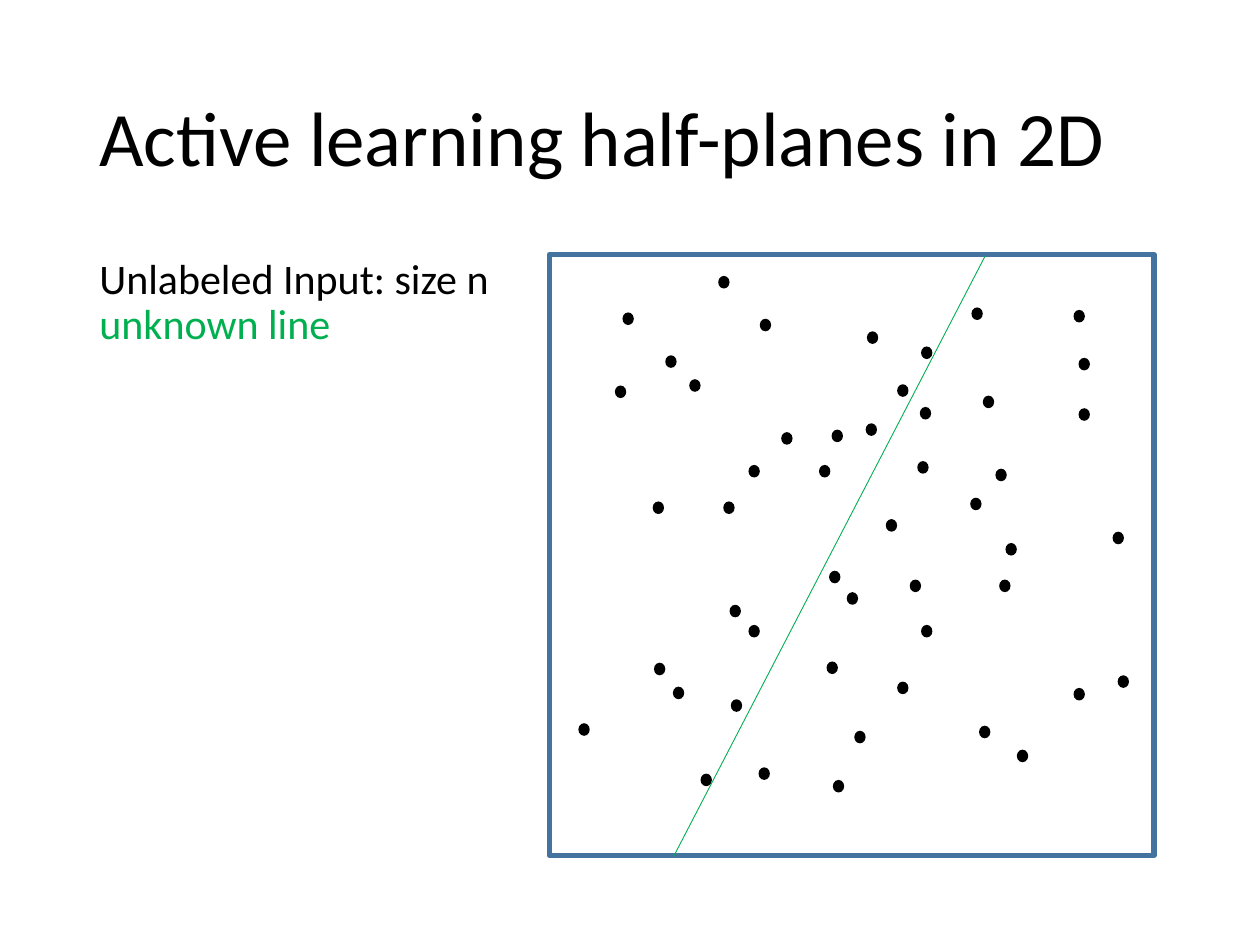
"""Build a slide on active learning of half-planes in 2D."""
from lxml import etree
from pptx import Presentation
from pptx.dml.color import RGBColor
from pptx.enum.shapes import MSO_CONNECTOR, MSO_SHAPE
from pptx.enum.text import MSO_ANCHOR
from pptx.oxml.ns import qn
from pptx.util import Inches, Pt

RECT, OVAL = MSO_SHAPE.RECTANGLE, MSO_SHAPE.OVAL
LINE = MSO_CONNECTOR.STRAIGHT
TOP, MIDDLE = MSO_ANCHOR.TOP, MSO_ANCHOR.MIDDLE
FONT = "Calibri"
COLORS = {"ink": "000000", "green": "00B050", "frame": "43739E"}
DOT_W, DOT_H = 0.09, 0.1
DOTS = [
    (4.94, 2.48), (4.88, 3.06), (5.28, 2.82), (6.88, 2.63), (7.31, 2.75),
    (5.18, 3.98), (5.74, 3.98), (6.2, 3.43), (5.19, 5.26), (4.59, 5.74),
    (5.8, 5.55), (5.79, 4.8), (5.56, 6.14), (6.02, 6.09), (7.22, 4.6),
    (7.12, 5.41), (7.93, 4.6), (7.77, 5.76), (6.72, 4.7), (8.07, 5.95),
    (5.7, 2.19), (5.47, 3.01), (6.03, 2.53), (7.71, 2.44), (8.52, 2.46),
    (5.94, 3.69), (6.5, 3.69), (6.87, 3.36), (5.94, 4.96), (5.34, 5.45),
    (6.56, 5.25), (6.58, 4.53), (6.61, 6.19), (6.78, 5.8), (7.98, 4.31),
    (7.31, 4.96), (8.83, 4.22), (8.52, 5.46), (7.28, 3.66), (8.87, 5.36),
    (7.8, 3.14), (7.7, 3.95), (8.56, 3.24), (7.3, 3.23), (7.03, 4.12),
    (7.12, 3.05), (8.56, 2.84), (7.9, 3.72), (6.6, 3.41),
]

prs = Presentation()
prs.slide_width, prs.slide_height = Inches(10), Inches(7.5)
slide = prs.slides.add_slide(prs.slide_layouts[6])
shapes = slide.shapes


def color(name):
    return RGBColor.from_string(COLORS[name])


def add_text(lines, box, size, anchor=TOP, before=0):
    frame = shapes.add_textbox(*map(Inches, box)).text_frame
    frame.word_wrap = True
    frame.vertical_anchor = anchor
    para = frame.paragraphs[0]
    para.line_spacing = 0.9
    para.space_before = Pt(before)
    for i, (text, tint) in enumerate(lines):
        if i:
            para.add_line_break()
        run = para.add_run()
        run.text = text
        run.font.name = FONT
        run.font.size = Pt(size)
        run.font.color.rgb = color(tint)


add_text([("Active learning half-planes in 2D", "ink")],
         (0.69, 0.4, 8.62, 1.45), size=44, anchor=MIDDLE)
add_text([("Unlabeled Input: size n", "ink"), ("unknown line", "green")],
         (0.69, 2, 3.58, 4.76), size=24, before=10)

frame = shapes.add_shape(RECT, Inches(4.36), Inches(2.02), Inches(4.8), Inches(4.77))
frame.shadow.inherit = False
frame.fill.background()
frame.line.color.rgb = color("frame")
frame.line.width = Pt(3)

for x, y in DOTS:
    dot = shapes.add_shape(OVAL, Inches(x), Inches(y), Inches(DOT_W), Inches(DOT_H))
    dot.shadow.inherit = False
    dot.fill.solid()
    dot.fill.fore_color.rgb = color("ink")
    dot.line.fill.background()

split = shapes.add_connector(LINE, Inches(7.82), Inches(2.03), Inches(5.35), Inches(6.79))
split.line.color.rgb = color("green")
split.line.width = Pt(0.5)
etree.SubElement(split._element.spPr, qn("a:effectLst"))

prs.save("out.pptx")
